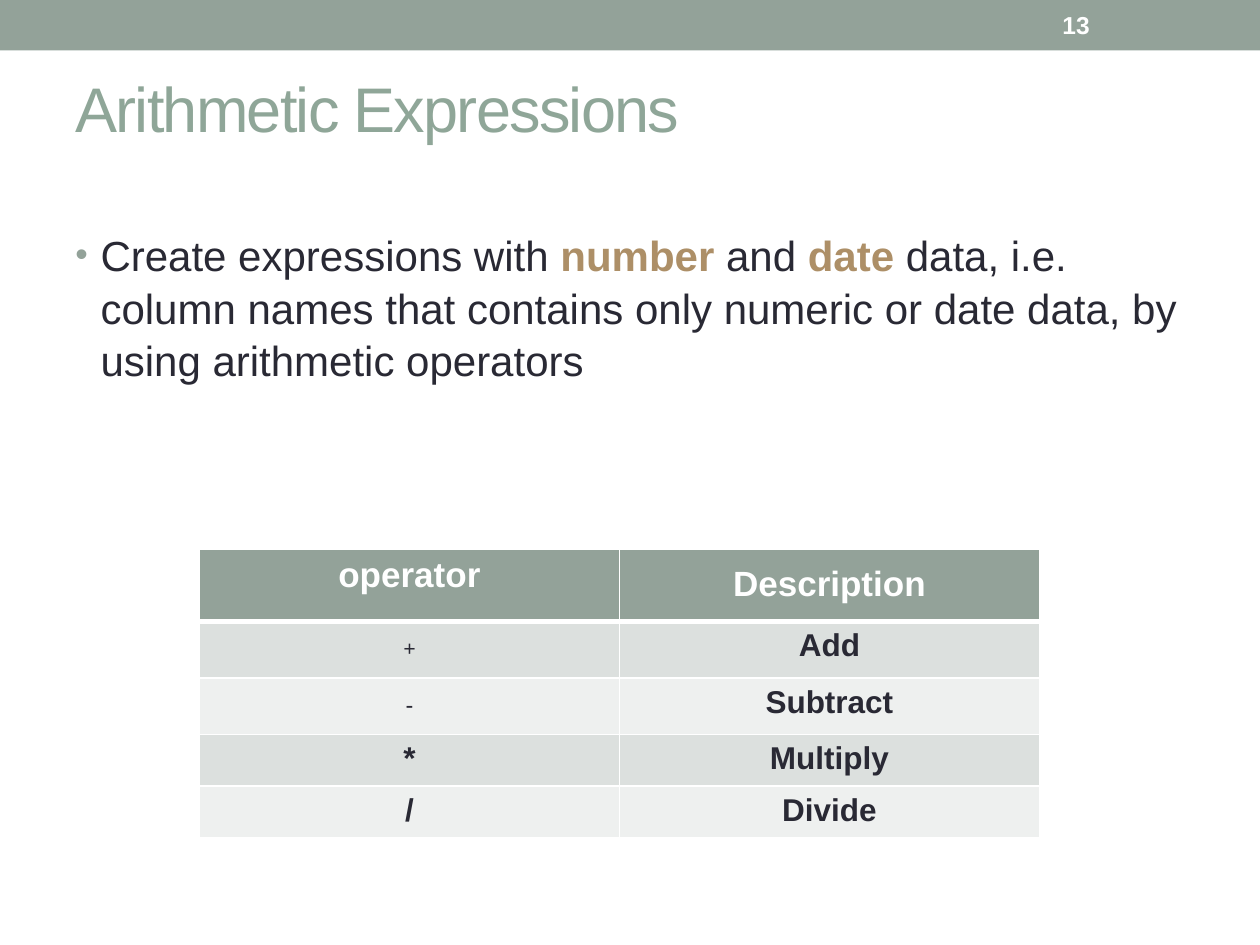
from lxml import etree
from pptx import Presentation
from pptx.dml.color import RGBColor
from pptx.enum import shapes, text
from pptx.oxml import ns
from pptx.util import Pt

SAGE = RGBColor(0x93, 0xA2, 0x99)
TITLE_GREEN = RGBColor(0x8F, 0xA6, 0x98)
TAN = RGBColor(0xAD, 0x8F, 0x67)
INK = RGBColor(0x29, 0x29, 0x34)
WHITE = RGBColor(0xFF, 0xFF, 0xFF)
BANDS = (RGBColor(0xDC, 0xE0, 0xDE), RGBColor(0xEE, 0xF0, 0xEF))

ROWS = [
    ("operator", "Description"),
    ("+", "Add"),
    ("-", "Subtract"),
    ("*", "Multiply"),
    ("/", "Divide"),
]
SMALL_SYMBOLS = ("+", "-")
PADDED = ("Description", *SMALL_SYMBOLS)
BODY_RUNS = [
    ("Create expressions with ", False),
    ("number ", True),
    ("and ", False),
    ("date", True),
    (" data, i.e. column names that contains only numeric or date data, "
     "by using arithmetic operators", False),
]


def style_run(run, size, color, bold=False, name="Arial"):
    font = run.font
    font.size, font.bold, font.name = Pt(size), bold, name
    font.color.rgb = color


def add_child(parent, tag, **attributes):
    return etree.SubElement(parent, ns.qn(tag), attributes)


def add_banner(slide, width, height):
    banner = slide.shapes.add_shape(
        shapes.MSO_SHAPE.RECTANGLE, 0, 0, Pt(width), Pt(height))
    banner.shadow.inherit = False
    banner.fill.solid()
    banner.fill.fore_color.rgb = SAGE
    banner.line.fill.background()


def add_text_box(slide, left, top, width, height):
    frame = slide.shapes.add_textbox(
        Pt(left), Pt(top), Pt(width), Pt(height)).text_frame
    frame.word_wrap = True
    return frame


def add_title(slide, title):
    frame = add_text_box(slide, 36, 40, 648, 78)
    frame.margin_top = 0
    frame.text = title
    run = frame.paragraphs[0].runs[0]
    style_run(run, 36, TITLE_GREEN)
    run.font._element.set("spc", "-100")


def add_slide_number(slide, number):
    frame = add_text_box(slide, 600, 1.4, 84, 26)
    frame.vertical_anchor = text.MSO_ANCHOR.MIDDLE
    frame.text = number
    style_run(frame.paragraphs[0].runs[0], 14, WHITE, bold=True)


def add_bullet(paragraph, indent):
    properties = paragraph._p.get_or_add_pPr()
    properties.set("marL", str(Pt(indent)))
    properties.set("indent", str(-Pt(indent)))
    add_child(add_child(properties, "a:buClr"), "a:srgbClr", val=str(SAGE))
    add_child(properties, "a:buSzPct", val="85000")
    add_child(properties, "a:buFont", typeface="Arial")
    add_child(properties, "a:buChar", char="•")


def add_body(slide):
    paragraph = add_text_box(slide, 36, 126, 648, 384).paragraphs[0]
    paragraph.line_spacing = 1.05
    add_bullet(paragraph, 14.4)
    for words, emphasized in BODY_RUNS:
        run = paragraph.add_run()
        run.text = words
        style_run(run, 24, TAN if emphasized else INK, bold=emphasized)


def set_borders(cell, top, bottom):
    properties = cell._tc.get_or_add_tcPr()
    for side, width in (("L", 1), ("R", 1), ("T", top), ("B", bottom)):
        line = add_child(properties, f"a:ln{side}", w=str(Pt(width)))
        add_child(add_child(line, "a:solidFill"), "a:srgbClr", val=str(WHITE))


def fill_cell(cell, words, row):
    header = row == 0
    set_borders(cell, top=3 if row == 1 else 1, bottom=3 if header else 1)
    cell.fill.solid()
    cell.fill.fore_color.rgb = SAGE if header else BANDS[(row - 1) % 2]
    if words in PADDED:
        cell.margin_left = cell.margin_right = Pt(8.64)
        cell.margin_top = cell.margin_bottom = Pt(8.64)
    cell.text = words
    paragraph = cell.text_frame.paragraphs[0]
    paragraph.alignment = text.PP_ALIGN.CENTER
    run = paragraph.runs[0]
    if header:
        style_run(run, 20, WHITE, bold=True)
    elif words in SMALL_SYMBOLS:
        style_run(run, 12.5, INK, bold=True, name="Times New Roman")
    else:
        style_run(run, 18, INK, bold=True)


def add_operator_table(slide):
    row_height = 29.5
    table = slide.shapes.add_table(
        len(ROWS), 2, Pt(114), Pt(314), Pt(480),
        Pt(row_height * len(ROWS))).table
    for row, entries in enumerate(ROWS):
        for column, words in enumerate(entries):
            fill_cell(table.cell(row, column), words, row)


def main():
    """Build the arithmetic expressions slide."""
    presentation = Presentation()
    presentation.slide_width, presentation.slide_height = Pt(720), Pt(540)
    slide = presentation.slides.add_slide(presentation.slide_layouts[6])
    add_banner(slide, 720, 28.8)
    add_title(slide, "Arithmetic Expressions")
    add_body(slide)
    add_slide_number(slide, "13")
    add_operator_table(slide)
    presentation.save("out.pptx")


if __name__ == "__main__":
    main()
